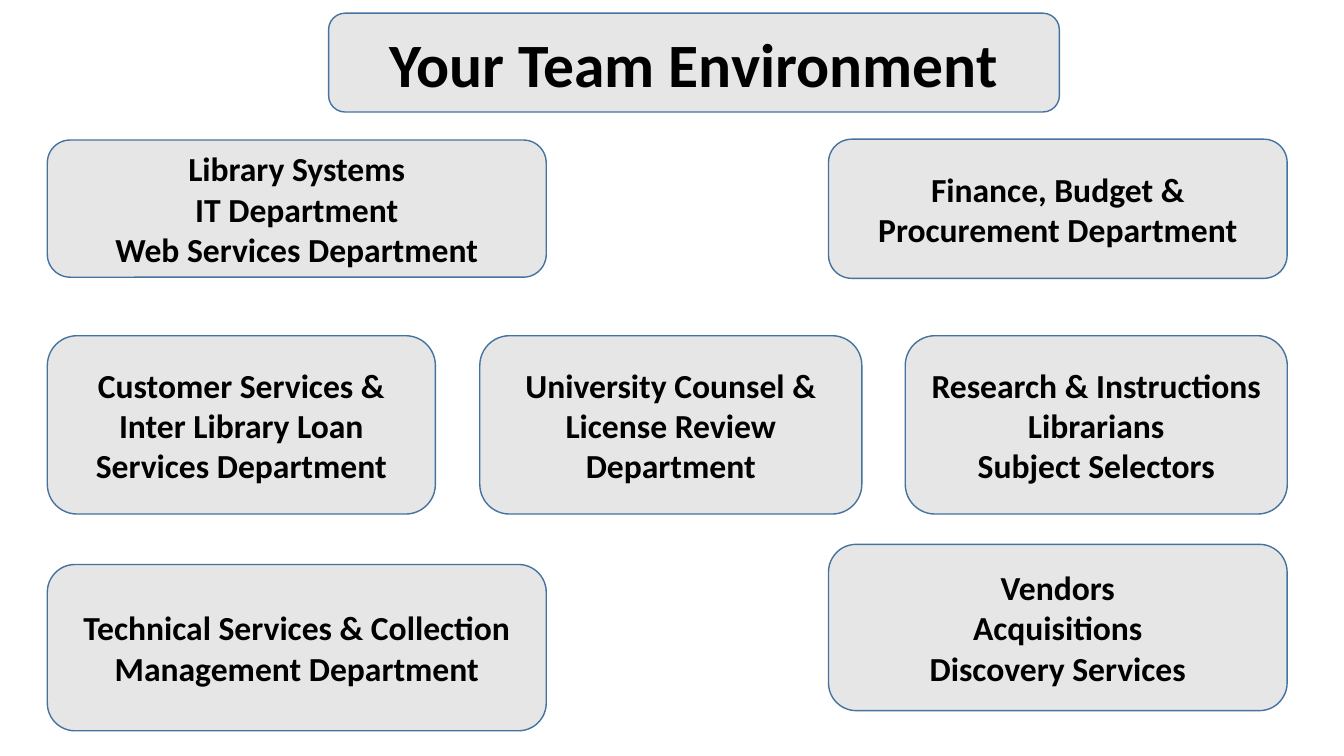
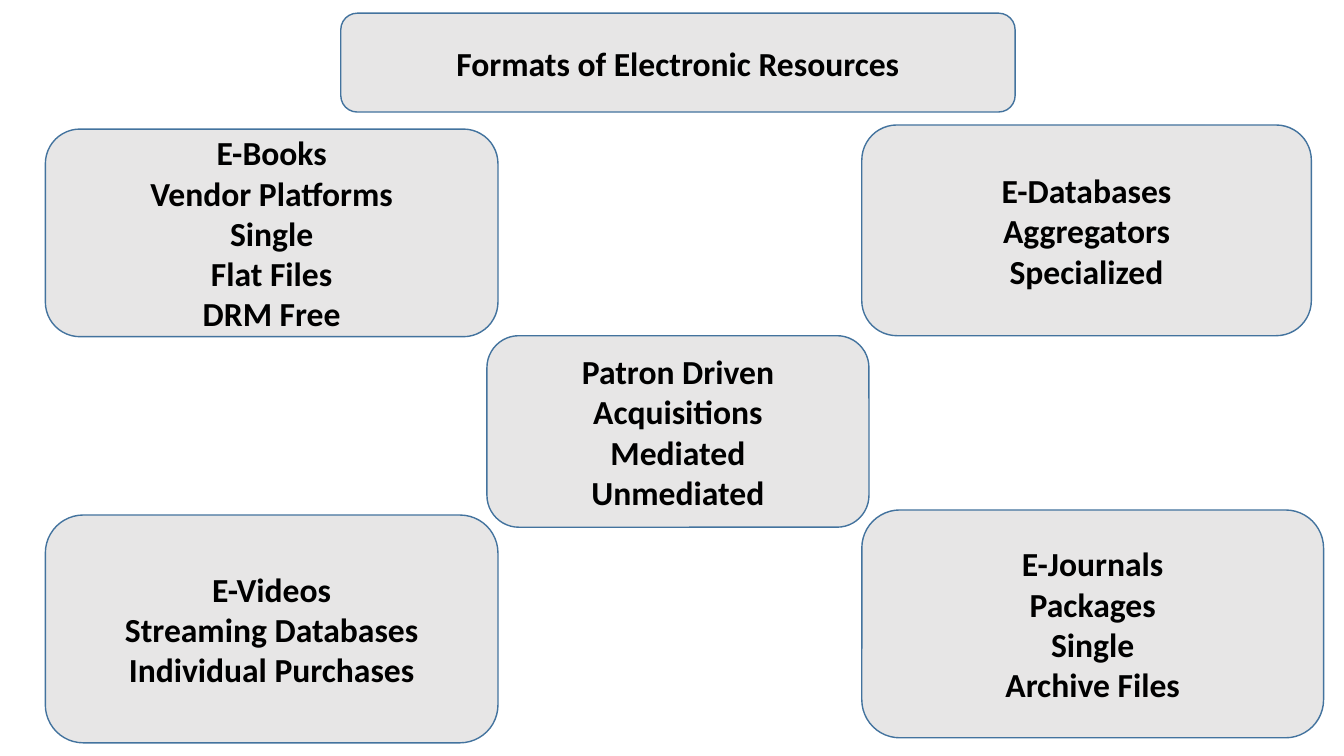
"""Build two slides of rounded boxes: the team environment and the resource formats."""
from pptx import Presentation
from pptx import util as u
from pptx.dml import color
from pptx.enum import shapes, text

BOX_FILL = "E7E6E6"
BOX_LINE = "43739E"
TEXT_FORMAT = {"name": "Calibri", "bold": True}
TITLE_TOP, TITLE_HEIGHT = 9.4, 70.6
MIDDLE_TOP = 239.8
BODY_SIZE = 24

LEFT, RIGHT = 33.8, 591.8
LEFT_WIDTH, RIGHT_WIDTH = 356.4, 327.6
CENTER_WIDTH, MIDDLE_HEIGHT, BOTTOM_HEIGHT = 272.9, 127.4, 118.8

FORMAT_LEFT, FORMAT_RIGHT = 32.4, 615.6
FORMAT_WIDTH, FORMAT_HEIGHT = 323.3, 162.7

SLIDES = [
    {
        "title": ("Your Team Environment", 234.7, 522, 44),
        "boxes": [
            (LEFT, 100, LEFT_WIDTH, 98,
             ["Library Systems", "IT Department", "Web Services Department"]),
            (RIGHT, 99.4, RIGHT_WIDTH, 99.4,
             ["Finance, Budget & Procurement Department"]),
            (LEFT, MIDDLE_TOP, 277.2, MIDDLE_HEIGHT,
             ["Customer Services & Inter Library Loan Services Department"]),
            (342.7, MIDDLE_TOP, CENTER_WIDTH, MIDDLE_HEIGHT,
             ["University Counsel & License Review Department"]),
            (646.6, MIDDLE_TOP, CENTER_WIDTH, MIDDLE_HEIGHT,
             ["Research & Instructions Librarians", "Subject Selectors"]),
            (LEFT, 403.2, LEFT_WIDTH, BOTTOM_HEIGHT,
             ["Technical Services & Collection Management Department"]),
            (RIGHT, 388.8, RIGHT_WIDTH, BOTTOM_HEIGHT,
             ["Vendors", "Acquisitions", "Discovery Services"]),
        ],
    },
    {
        "title": ("Formats of Electronic Resources", 243.4, 481.7, BODY_SIZE),
        "boxes": [
            (FORMAT_RIGHT, 364.3, 329.8, FORMAT_HEIGHT,
             ["E-Journals", "Packages", "Single", "Archive Files"]),
            (FORMAT_LEFT, 367.9, FORMAT_WIDTH, FORMAT_HEIGHT,
             ["E-Videos", "Streaming Databases", "Individual Purchases"]),
            (347.8, MIDDLE_TOP, CENTER_WIDTH, 136.8,
             ["Patron Driven Acquisitions", "Mediated", "Unmediated"]),
            (FORMAT_LEFT, 92.2, FORMAT_WIDTH, 148.3,
             ["E-Books", "Vendor Platforms", "Single", "Flat Files", "DRM Free"]),
            (FORMAT_RIGHT, 89.3, 321.1, 150.5,
             ["E-Databases", "Aggregators", "Specialized"]),
        ],
    },
]


def paint(target, hex_color):
    target.rgb = color.RGBColor.from_string(hex_color)


def add_box(slide, left, top, width, height, lines, size=BODY_SIZE):
    shape = slide.shapes.add_shape(
        shapes.MSO_SHAPE.FLOWCHART_ALTERNATE_PROCESS,
        u.Pt(left), u.Pt(top), u.Pt(width), u.Pt(height))
    shape.shadow.inherit = False
    shape.fill.solid()
    paint(shape.fill.fore_color, BOX_FILL)
    paint(shape.line.color, BOX_LINE)
    shape.line.width = u.Pt(1)
    frame = shape.text_frame
    frame.word_wrap = True
    frame.vertical_anchor = text.MSO_ANCHOR.MIDDLE
    frame.text = "\n".join(lines)
    for paragraph in frame.paragraphs:
        paragraph.alignment = text.PP_ALIGN.CENTER
        for run in paragraph.runs:
            for attribute, value in TEXT_FORMAT.items():
                setattr(run.font, attribute, value)
            run.font.size = u.Pt(size)
            paint(run.font.color, "000000")


presentation = Presentation()
presentation.slide_width = u.Pt(960)
presentation.slide_height = u.Pt(540)

for content in SLIDES:
    slide = presentation.slides.add_slide(presentation.slide_layouts[6])
    title, left, width, size = content["title"]
    add_box(slide, left, TITLE_TOP, width, TITLE_HEIGHT, [title], size)
    for box in content["boxes"]:
        add_box(slide, *box)

presentation.save("out.pptx")
